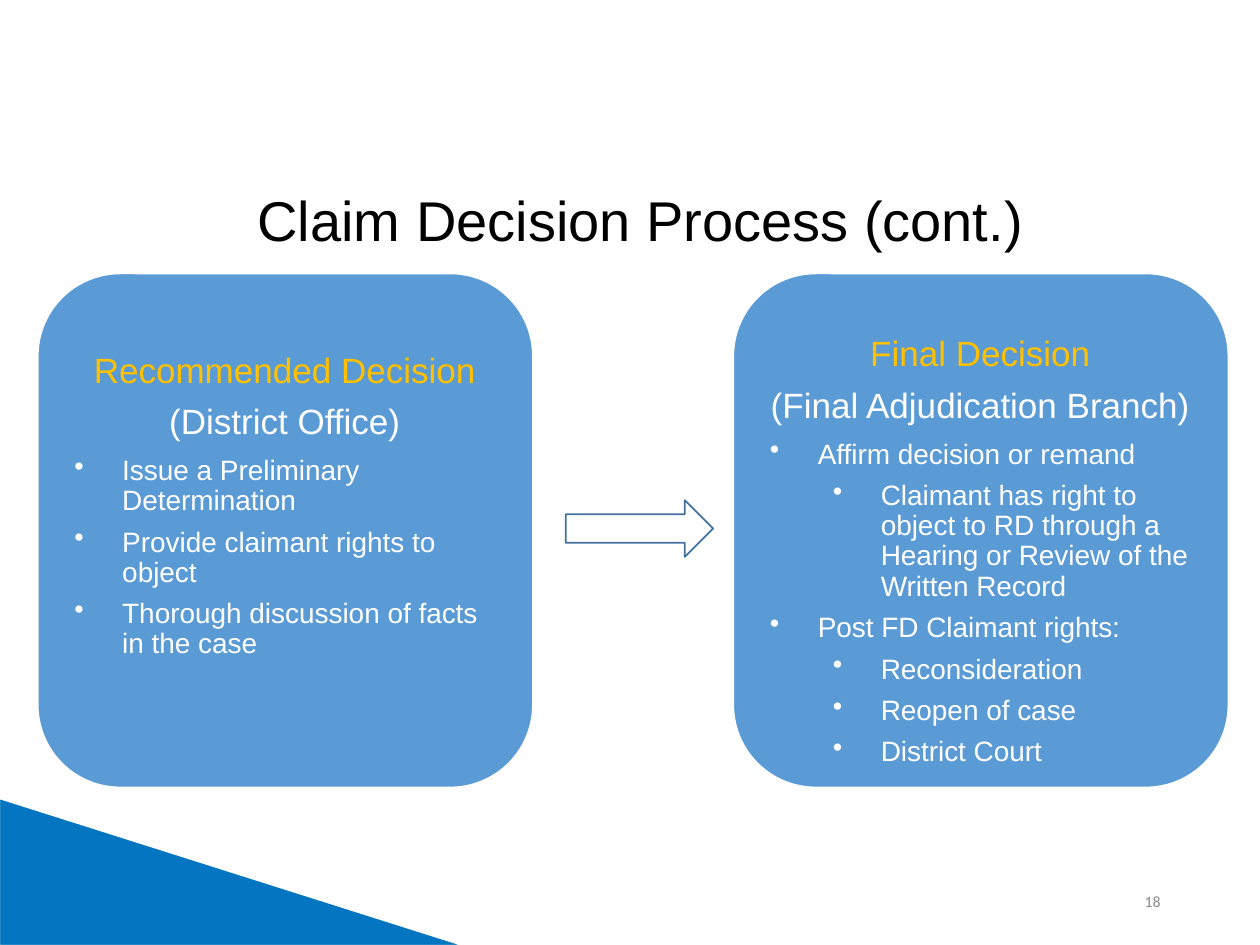
import pptx
import pptx.util
import pptx.dml.color
import pptx.enum.shapes
import pptx.enum.text
import lxml.etree

Pt = pptx.util.Pt
Inches = pptx.util.Inches
Kind = pptx.enum.shapes.MSO_SHAPE
Align = pptx.enum.text.PP_ALIGN
Anchor = pptx.enum.text.MSO_ANCHOR


def tint(code):
    return pptx.dml.color.RGBColor.from_string(code)


class Deck:
    cols, rows = 100, 75
    font = "Arial"
    white, card, gold = "FFFFFF", "5B9BD5", "FFC000"

    def __init__(self):
        self.file = pptx.Presentation()
        self.file.slide_width = Inches(10)
        self.file.slide_height = Inches(7.5)
        self.slide = self.file.slides.add_slide(self.file.slide_layouts[6])

    def place(self, left, top, width, height):
        col = self.file.slide_width / self.cols
        row = self.file.slide_height / self.rows
        return [round(n) for n in (left * col, top * row, width * col, height * row)]

    def shape(self, kind, area, fill, line, weight=1):
        item = self.slide.shapes.add_shape(kind, *self.place(*area))
        item.shadow.inherit = False
        item.fill.solid()
        item.fill.fore_color.rgb = tint(fill)
        item.line.color.rgb = tint(line)
        item.line.width = Pt(weight)

    def box(self, area, anchor=Anchor.TOP):
        frame = self.slide.shapes.add_textbox(*self.place(*area)).text_frame
        frame.word_wrap = True
        frame.vertical_anchor = anchor
        return frame

    def style(self, para, size, color, align, font=None):
        para.alignment = align
        for run in para.runs:
            run.font.size = Pt(size)
            run.font.name = font or self.font
            run.font.color.rgb = tint(color)

    def label(self, area, text, size, color, align, font=None, anchor=Anchor.TOP):
        frame = self.box(area, anchor)
        frame.text = text
        self.style(frame.paragraphs[0], size, color, align, font)

    def bullet(self, para, level):
        para.level = level
        props = para._p.get_or_add_pPr()
        props.set("marL", str(Inches(0.38 + 0.5 * level)))
        props.set("indent", str(-Inches(0.38)))
        mark = lxml.etree.SubElement(props, pptx.oxml.ns.qn("a:buChar"))
        mark.set("char", "•")

    def panel(self, left, top, heads, points):
        self.shape(Kind.ROUNDED_RECTANGLE, (left, 21.7, 39.3, 40.8), self.card, self.white)
        frame = self.box((left + 1.2, top, 36.8, 62.2 - top))
        frame.margin_left = frame.margin_right = Inches(0.17)
        frame.margin_top = frame.margin_bottom = Inches(0.08)
        frame.text = "\n".join(heads + [text for level, text in points])
        paras = frame.paragraphs
        for para, color in zip(paras, (self.gold, self.white)):
            para.line_spacing = 0.9
            para.space_after = Pt(8)
            self.style(para, 20, color, Align.CENTER)
        for para, (level, text) in zip(paras[len(heads):], points):
            para.line_spacing = 0.9
            para.space_after = Pt(6.4)
            self.bullet(para, level)
            self.style(para, 16, self.white, Align.LEFT)


def main():
    deck = Deck()
    deck.shape(Kind.RIGHT_TRIANGLE, (-0.1, 63.3, 37.2, 11.8), "0475C0", deck.white, 1.5)
    deck.label((70.6, 69.5, 22.5, 4), "18", 9, "8C8C8C", Align.RIGHT, "Calibri", Anchor.MIDDLE)
    deck.label((9.2, 14.2, 83.3, 6.4), "Claim Decision Process (cont.)", 32, "000000", Align.CENTER)
    deck.panel(3, 27.2, ["Recommended Decision", "(District Office)"], [
        (0, "Issue a Preliminary Determination"),
        (0, "Provide claimant rights to object"),
        (0, "Thorough discussion of facts in the case"),
    ])
    deck.shape(Kind.RIGHT_ARROW, (44.9, 39.7, 11.7, 4.5), deck.white, "43739E")
    deck.panel(58.2, 25.9, ["Final Decision", "(Final Adjudication Branch)"], [
        (0, "Affirm decision or remand"),
        (1, "Claimant has right to object to RD through a Hearing or Review of the Written Record"),
        (0, "Post FD Claimant rights:"),
        (1, "Reconsideration"),
        (1, "Reopen of case"),
        (1, "District Court"),
    ])
    deck.file.save("out.pptx")


if __name__ == "__main__":
    main()
